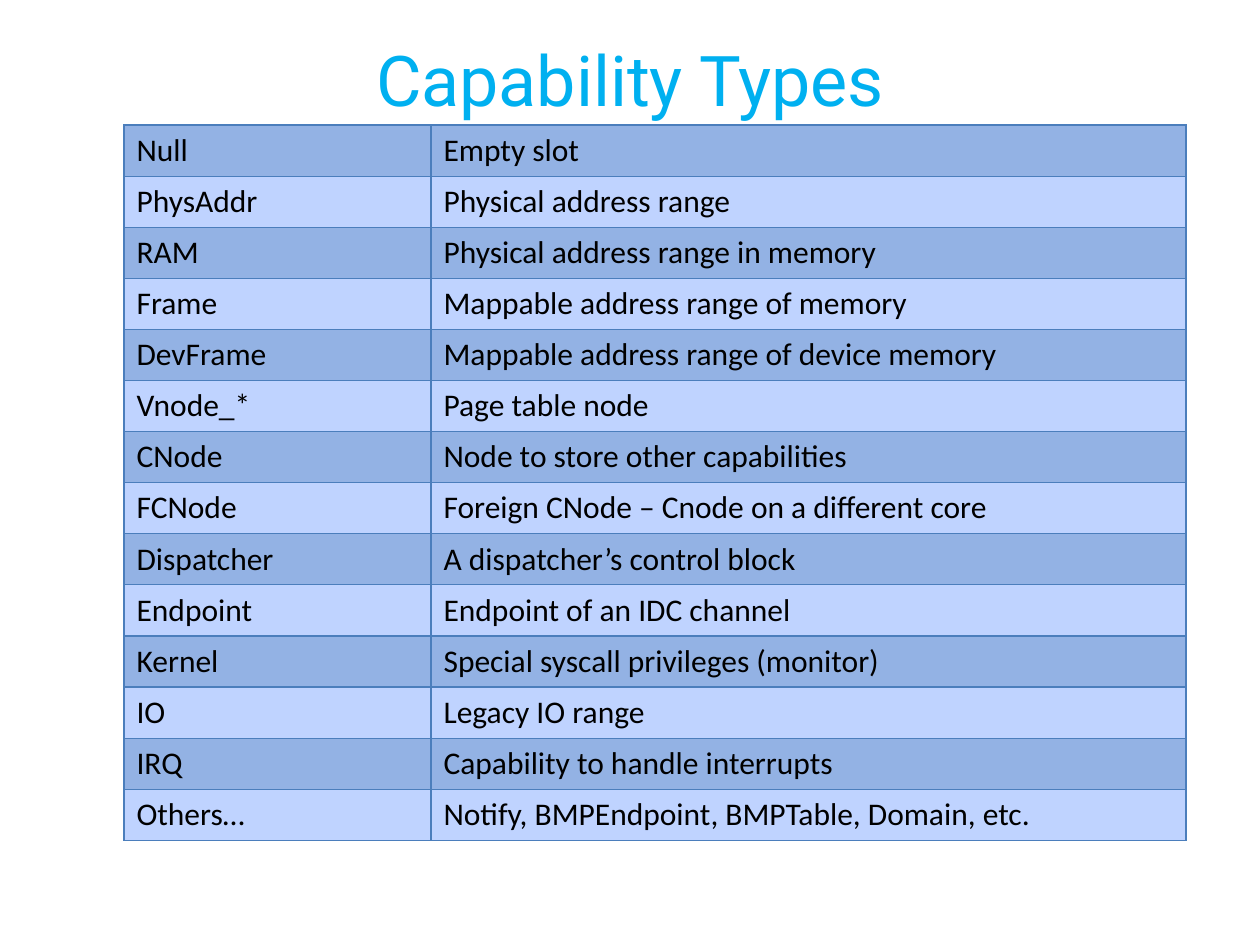
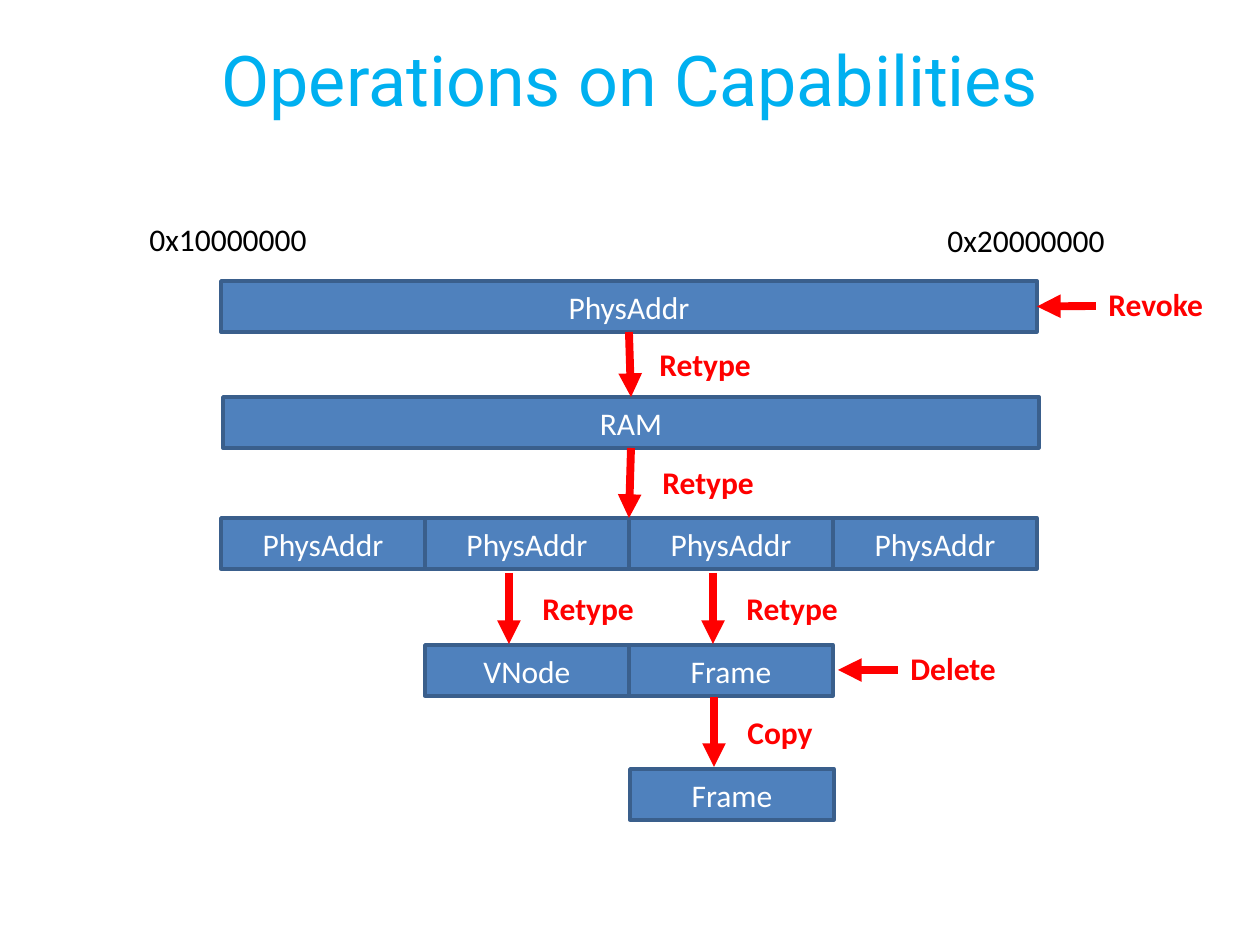
from lxml.etree import SubElement
from pptx import Presentation
from pptx.dml.color import RGBColor
from pptx.enum.shapes import MSO_CONNECTOR, MSO_SHAPE
from pptx.enum.text import MSO_ANCHOR, MSO_AUTO_SIZE, PP_ALIGN
from pptx.oxml.ns import qn
from pptx.util import Emu, Pt

SKY = RGBColor(0x00, 0xB0, 0xF0)
BLUE = RGBColor(0x4F, 0x81, 0xBD)
NAVY = RGBColor(0x3A, 0x5F, 0x8C)
GRID = RGBColor(0x4B, 0x7E, 0xBC)
DARK = RGBColor(0x93, 0xB2, 0xE4)
LIGHT = RGBColor(0xBF, 0xD3, 0xFF)
RED = RGBColor(0xFF, 0x00, 0x00)
BLACK = RGBColor(0x00, 0x00, 0x00)
WHITE = RGBColor(0xFF, 0xFF, 0xFF)

TYPES = [
    ("Null", "Empty slot"),
    ("PhysAddr", "Physical address range"),
    ("RAM", "Physical address range in memory"),
    ("Frame", "Mappable address range of memory"),
    ("DevFrame", "Mappable address range of device memory"),
    ("Vnode_*", "Page table node"),
    ("CNode", "Node to store other capabilities"),
    ("FCNode", "Foreign CNode – Cnode on a different core"),
    ("Dispatcher", "A dispatcher’s control block"),
    ("Endpoint", "Endpoint of an IDC channel"),
    ("Kernel", "Special syscall privileges (monitor)"),
    ("IO", "Legacy IO range"),
    ("IRQ", "Capability to handle interrupts"),
    ("Others…", "Notify, BMPEndpoint, BMPTable, Domain, etc."),
]

# Boxes: text, left, top, number of quarters covered
LEFT, PART, HIGH = 221, 204, 51
BOXES = [("PhysAddr", LEFT, 281, 4), ("RAM", LEFT + 2, 397, 4)]
BOXES += [("PhysAddr", LEFT + i * PART, 518, 1) for i in range(4)]
BOXES += [
    ("VNode", LEFT + PART, 645, 1),
    ("Frame", LEFT + 2 * PART, 645, 1),
    ("Frame", LEFT + 2 * PART + 1, 769, 1),
]
ENDS = [("0x10000000", 137, 214), ("0x20000000", 935, 215)]

# Arrows: label, label width, start, end, joined (box, side) at start and end
STEPS = [
    ("Retype", 117, (626, 329), (626, 399), (0, 2), (1, 0)),
    ("Retype", 117, (629, 447), (629, 518), (1, 2), None),
    ("Retype", 117, (509, 573), (509, 644), None, None),
    ("Retype", 117, (713, 573), (713, 644), None, None),
    ("Copy", 91, (714, 697), (714, 767), None, None),
    ("Delete", 111, (898, 670), (838, 670), None, None),
    ("Revoke", 121, (1096, 306), (1037, 306), None, (0, 3)),
]

SCALE = 914400 / 126


def px(*nums):
    return [Emu(round(n * SCALE)) for n in nums]


def write(frame, text, size=18, font="Calibri", color=BLACK, bold=False,
          align=PP_ALIGN.LEFT):
    para = frame.paragraphs[0]
    para.text = text
    para.alignment = align
    para.font.size = Pt(size)
    para.font.name = font
    para.font.color.rgb = color
    para.font.bold = bold


def start(prs, title):
    """Add a slide with the shared title style."""
    slide = prs.slides.add_slide(prs.slide_layouts[5])
    head = slide.shapes.title
    head.left, head.top, head.width, head.height = px(0, 0, 1260, 157)
    head.text_frame.vertical_anchor = MSO_ANCHOR.MIDDLE
    write(head.text_frame, title, size=40, font="Roboto", color=SKY,
          align=PP_ALIGN.CENTER)
    return slide


def edge(cell):
    """Draw thin lines on all four sides of a cell."""
    props = cell._tc.get_or_add_tcPr()
    for side in ("lnL", "lnR", "lnT", "lnB"):
        line = SubElement(props, qn("a:" + side), w=str(Pt(0.75)))
        fill = SubElement(line, qn("a:solidFill"))
        SubElement(fill, qn("a:srgbClr"), val=str(GRID))


def fill_table(slide):
    wide, row = (307, 755), 51
    table = slide.shapes.add_table(
        len(TYPES), 2, *px(124, 125, sum(wide), row * len(TYPES))).table
    table.first_row = table.horz_banding = False
    for col, size in zip(table.columns, px(*wide)):
        col.width = size
    for r, texts in enumerate(TYPES):
        table.rows[r].height = px(row)[0]
        for c, text in enumerate(texts):
            cell = table.cell(r, c)
            edge(cell)
            cell.fill.solid()
            cell.fill.fore_color.rgb = LIGHT if r % 2 else DARK
            write(cell.text_frame, text)


def add_box(slide, text, left, top, parts):
    box = slide.shapes.add_shape(
        MSO_SHAPE.RECTANGLE, *px(left, top, parts * PART, HIGH))
    box.shadow.inherit = False
    box.fill.solid()
    box.fill.fore_color.rgb = BLUE
    box.line.color.rgb = NAVY
    box.line.width = Pt(2)
    write(box.text_frame, text, color=WHITE, align=PP_ALIGN.CENTER)
    return box


def add_label(slide, text, left, top, wide, **style):
    frame = slide.shapes.add_textbox(*px(left, top, wide, HIGH)).text_frame
    frame.word_wrap = False
    frame.auto_size = MSO_AUTO_SIZE.SHAPE_TO_FIT_TEXT
    write(frame, text, **style)


def add_step(slide, boxes, label, wide, tail, tip, first, last):
    """Draw a red arrow, join it to its boxes and set its label beside it."""
    arrow = slide.shapes.add_connector(
        MSO_CONNECTOR.STRAIGHT, *px(*tail, *tip))
    if first:
        arrow.begin_connect(boxes[first[0]], first[1])
    if last:
        arrow.end_connect(boxes[last[0]], last[1])
    arrow.line.color.rgb = RED
    arrow.line.width = Pt(4.5)
    props = arrow._element.spPr
    SubElement(props.find(qn("a:ln")), qn("a:tailEnd"), type="triangle")
    SubElement(props, qn("a:effectLst"))
    dx, dy = (21, 10) if tail[0] == tip[0] else (0, -27)
    add_label(slide, label, tail[0] + dx, tail[1] + dy, wide,
              color=RED, bold=True)


def main():
    prs = Presentation()
    prs.slide_width, prs.slide_height = px(1260, 945)

    fill_table(start(prs, "Capability Types"))

    slide = start(prs, "Operations on Capabilities")
    boxes = [add_box(slide, *box) for box in BOXES]
    for text, left, top in ENDS:
        add_label(slide, text, left, top, 184)
    for step in STEPS:
        add_step(slide, boxes, *step)

    prs.save("out.pptx")


if __name__ == "__main__":
    main()
